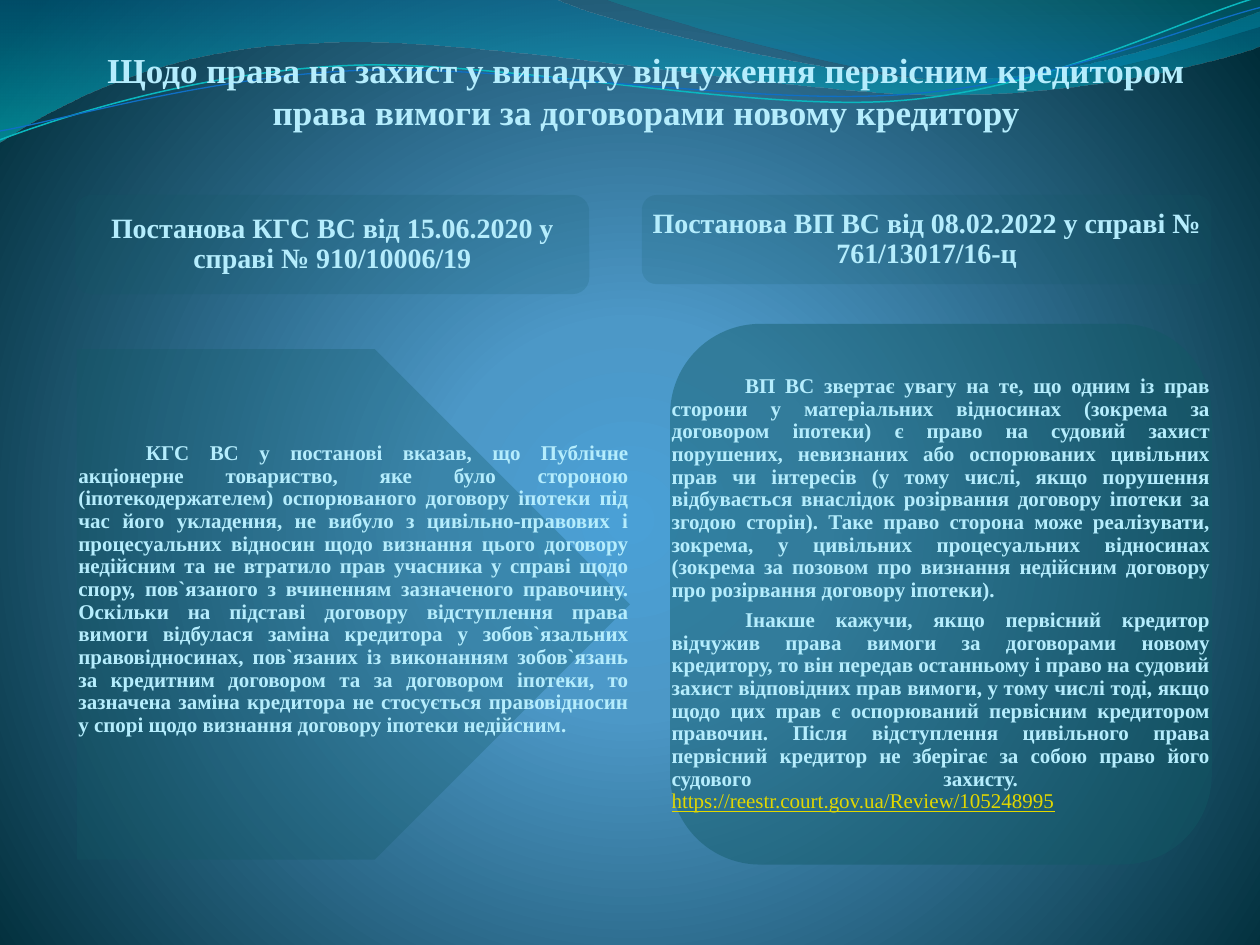
"""Build a slide comparing two court rulings on assignment of a creditor's claim."""
from lxml import etree
from pptx import Presentation
from pptx.dml.color import RGBColor
from pptx.enum.shapes import MSO_SHAPE as Geometry
from pptx.enum.text import MSO_ANCHOR as Anchor, MSO_AUTO_SIZE as AutoSize, PP_ALIGN as Align
from pptx.oxml.ns import qn
from pptx.util import Cm, Pt

DEEP_TEAL = RGBColor(0x11, 0x59, 0x64)
PALE_CYAN = RGBColor(0xB5, 0xED, 0xFD)
LINK_YELLOW = RGBColor(0xE2, 0xD7, 0x00)
GLOW = RGBColor(0x4A, 0xA0, 0xD6)
MID_BLUE = RGBColor(0x4C, 0x98, 0xC7)
NIGHT = RGBColor(0x00, 0x2C, 0x38)
OCEAN = RGBColor(0x00, 0x74, 0xA1)
AQUA = RGBColor(0x00, 0xC6, 0xCF)
LAGOON = RGBColor(0x00, 0xA1, 0xA9)
AZURE = RGBColor(0x00, 0x8B, 0xBF)
TEAL_LINE = RGBColor(0x0A, 0xB8, 0xBF)
BLUE_LINE = RGBColor(0x0F, 0x6F, 0xC6)
FONT = "Times New Roman"
UNITS = 1000


def paint_gradient(fill, owner, stops, direction):
    fill.gradient()
    gradient = next(owner.iter(qn("a:gradFill")))
    gradient.clear()
    stop_list = etree.SubElement(gradient, qn("a:gsLst"))
    for position, color, opacity in stops:
        stop = etree.SubElement(stop_list, qn("a:gs"), pos=str(position * 1000))
        tint = etree.SubElement(stop, qn("a:srgbClr"), val=str(color))
        etree.SubElement(tint, qn("a:alpha"), val=str(opacity * 1000))
    if direction == "circle":
        glow = etree.SubElement(gradient, qn("a:path"), path="circle")
        etree.SubElement(glow, qn("a:fillToRect"), l="10000", t="110000", r="10000", b="100000")
    else:
        etree.SubElement(gradient, qn("a:lin"), ang=str(direction * 60000), scaled="0")


def draw_curve(segments, closed):
    points = [(round(x * UNITS), round(y * UNITS))
              for segment in segments for x, y in zip(segment[::2], segment[1::2])]
    builder = slide.shapes.build_freeform(*points[0], scale=Cm(2.54) / UNITS)
    builder.add_line_segments(points[1:], close=closed)
    curve = builder.convert_to_shape()
    sides = iter(list(curve.element.iter(qn("a:lnTo"))))
    for segment in segments[1:]:
        side = next(sides)
        if len(segment) == 6:
            side.tag = qn("a:cubicBezTo")
            for _ in range(2):
                control = next(sides)
                side.append(control[0])
                control.getparent().remove(control)
    return curve


deck = Presentation()
deck.slide_width, deck.slide_height = Cm(25.4), Cm(19.05)
slide = deck.slides.add_slide(deck.slide_layouts[4])
paint_gradient(slide.background.fill, slide.element,
               [(0, GLOW, 100), (25, MID_BLUE, 100), (100, NIGHT, 100)], "circle")

waves = [
    ([(0, 0), (4.4, -0.01), (4.76, 0.17, 6.64, 0.63, 7.58, 0.63),
      (8.53, 0.63, 9.58, 0.26, 10, 0.09), (10.01, 0.36),
      (9.83, 0.44, 8.7, 0.76, 7.46, 0.75), (6.22, 0.75, 3.82, 0.28, 2.57, 0.34),
      (1.29, 0.36, 0.46, 0.83, -0.01, 1.13)],
     [(0, OCEAN, 45), (100, AQUA, 55)], None, 0),
    ([(4.79, -0.01), (5.09, 0.11, 6.82, 0.62, 7.69, 0.65),
      (8.56, 0.69, 9.61, 0.32, 10, 0.21), (10, 0)],
     [(0, LAGOON, 30), (80, AZURE, 45)], None, 0),
    ([(0, 1.11), (0.48, 0.93, 1.58, 0.57, 2.77, 0.52),
      (3.95, 0.47, 5.93, 0.89, 7.13, 0.8), (8.33, 0.71, 9.38, 0.15, 9.98, -0.02)],
     None, TEAL_LINE, 0.85),
    ([(0, 1.04), (0.47, 0.96, 1.64, 0.61, 2.83, 0.56),
      (4.03, 0.51, 5.97, 0.84, 7.17, 0.75), (8.36, 0.67, 9.41, 0.21, 10, 0.06)],
     None, BLUE_LINE, 0.75),
]
for segments, stops, line_color, line_width in waves:
    wave = draw_curve(segments, stops is not None)
    wave.shadow.inherit = False
    if stops:
        paint_gradient(wave.fill, wave.element, stops, 90)
        wave.line.fill.background()
    else:
        wave.fill.background()
        wave.line.color.rgb = line_color
        wave.line.width = Pt(line_width)

panels = [
    (Geometry.PENTAGON, (1.55, 7.04, 11.15, 10.29), 29),
    (Geometry.FLOWCHART_ALTERNATE_PROCESS, (13.51, 6.53, 10.92, 10.9), 44),
    (Geometry.ROUNDED_RECTANGLE, (1.52, 3.93, 10.36, 2), 17),
    (Geometry.ROUNDED_RECTANGLE, (12.94, 3.93, 11.48, 1.8), 16),
]
for geometry, box, opacity in panels:
    panel = slide.shapes.add_shape(geometry, *map(Cm, box))
    panel.shadow.inherit = False
    panel.fill.solid()
    panel.fill.fore_color.rgb = DEEP_TEAL
    tint = next(panel.element.spPr.iter(qn("a:srgbClr")))
    etree.SubElement(tint, qn("a:alpha"), val=str(opacity * 1000))
    panel.line.fill.background()

heading_title = "Щодо права на захист у випадку відчуження первісним кредитором права вимоги за договорами новому кредитору"
ruling_2020 = "Постанова КГС ВС від 15.06.2020 у справі № 910/10006/19"
ruling_2022 = "Постанова ВП ВС від 08.02.2022 у справі № 761/13017/16-ц"
position_2020 = (
    "КГС ВС у постанові вказав, що Публічне акціонерне товариство, яке було стороною "
    "(іпотекодержателем) оспорюваного договору іпотеки під час його укладення, не вибуло з "
    "цивільно-правових і процесуальних відносин щодо визнання цього договору недійсним та не "
    "втратило прав учасника у справі щодо спору, пов`язаного з вчиненням зазначеного правочину. "
    "Оскільки на підставі договору відступлення права вимоги відбулася заміна кредитора у "
    "зобов`язальних правовідносинах, пов`язаних із виконанням зобов`язань за кредитним договором "
    "та за договором іпотеки, то зазначена заміна кредитора не стосується правовідносин у спорі "
    "щодо визнання договору іпотеки недійсним.")
position_2022 = (
    "ВП ВС звертає увагу на те, що одним із прав сторони у матеріальних відносинах (зокрема за "
    "договором іпотеки) є право на судовий захист порушених, невизнаних або оспорюваних цивільних "
    "прав чи інтересів (у тому числі, якщо порушення відбувається внаслідок розірвання договору "
    "іпотеки за згодою сторін). Таке право сторона може реалізувати, зокрема, у цивільних "
    "процесуальних відносинах (зокрема за позовом про визнання недійсним договору про розірвання "
    "договору іпотеки).")
conclusion_2022 = (
    "Інакше кажучи, якщо первісний кредитор відчужив права вимоги за договорами новому кредитору, "
    "то він передав останньому і право на судовий захист відповідних прав вимоги, у тому числі "
    "тоді, якщо щодо цих прав є оспорюваний первісним кредитором правочин. Після відступлення "
    "цивільного права первісний кредитор не зберігає за собою право його судового захисту. ")
registry_link = " https://reestr.court.gov.ua/Review/105248995"

bold_text = {"name": FONT, "bold": True}
link_text = {"name": FONT, "bold": False, "underline": True, "size": Pt(12)}
title_lines = {"alignment": Align.CENTER, "line_spacing": 1.0}
ruling_lines = {"alignment": Align.CENTER, "line_spacing": 0.9, "space_before": Pt(0)}
position_lines = {"alignment": Align.JUSTIFY, "line_spacing": 0.9,
                  "space_before": Pt(0), "space_after": Pt(4.2)}

texts = [
    (0, (1.7, 0.74, 22.71, 1.94), (0, 0, 0.05, 0), Anchor.BOTTOM, 20, title_lines, 0,
     [[heading_title]]),
    (2, (1.53, 7.04, 11.15, 10.29), (0.05, 0.02, 0, 0.62), Anchor.MIDDLE, 12, position_lines, 1.36,
     [[position_2020]]),
    (4, (13.51, 6.53, 10.92, 10.9), (0.03, 0.05, 0.03, 0.05), Anchor.MIDDLE, 12, position_lines, 1.48,
     [[position_2022], [conclusion_2022, registry_link]]),
    (1, (1.52, 3.92, 10.36, 2), (0.18,) * 4, Anchor.MIDDLE, 16, ruling_lines, 0,
     [[ruling_2020]]),
    (3, (12.94, 3.92, 11.48, 1.8), (0.18,) * 4, Anchor.MIDDLE, 16, ruling_lines, 0,
     [[ruling_2022]]),
]
holders = {holder.placeholder_format.idx: holder for holder in slide.placeholders}
for idx, box, insets, anchor, size, line_format, indent, paragraphs in texts:
    holder = holders[idx]
    slide.shapes.element.append(holder.element)
    for side, length in zip(("left", "top", "width", "height"), box):
        setattr(holder, side, Cm(length))
    frame = holder.text_frame
    for side, length in zip(("left", "top", "right", "bottom"), insets):
        setattr(frame, f"margin_{side}", Cm(length))
    frame.word_wrap, frame.auto_size, frame.vertical_anchor = True, AutoSize.NONE, anchor
    for number, parts in enumerate(paragraphs):
        paragraph = frame.add_paragraph() if number else frame.paragraphs[0]
        for key, value in line_format.items():
            setattr(paragraph, key, value)
        properties = paragraph._p.get_or_add_pPr()
        properties.set("marL", "0")
        properties.set("indent", str(Cm(indent)))
        etree.SubElement(properties, qn("a:buNone"))
        for part in parts:
            run = paragraph.add_run()
            run.text = part
            is_link = part == registry_link
            for key, value in (link_text if is_link else {**bold_text, "size": Pt(size)}).items():
                setattr(run.font, key, value)
            run.font.color.rgb = LINK_YELLOW if is_link else PALE_CYAN

deck.save("out.pptx")
